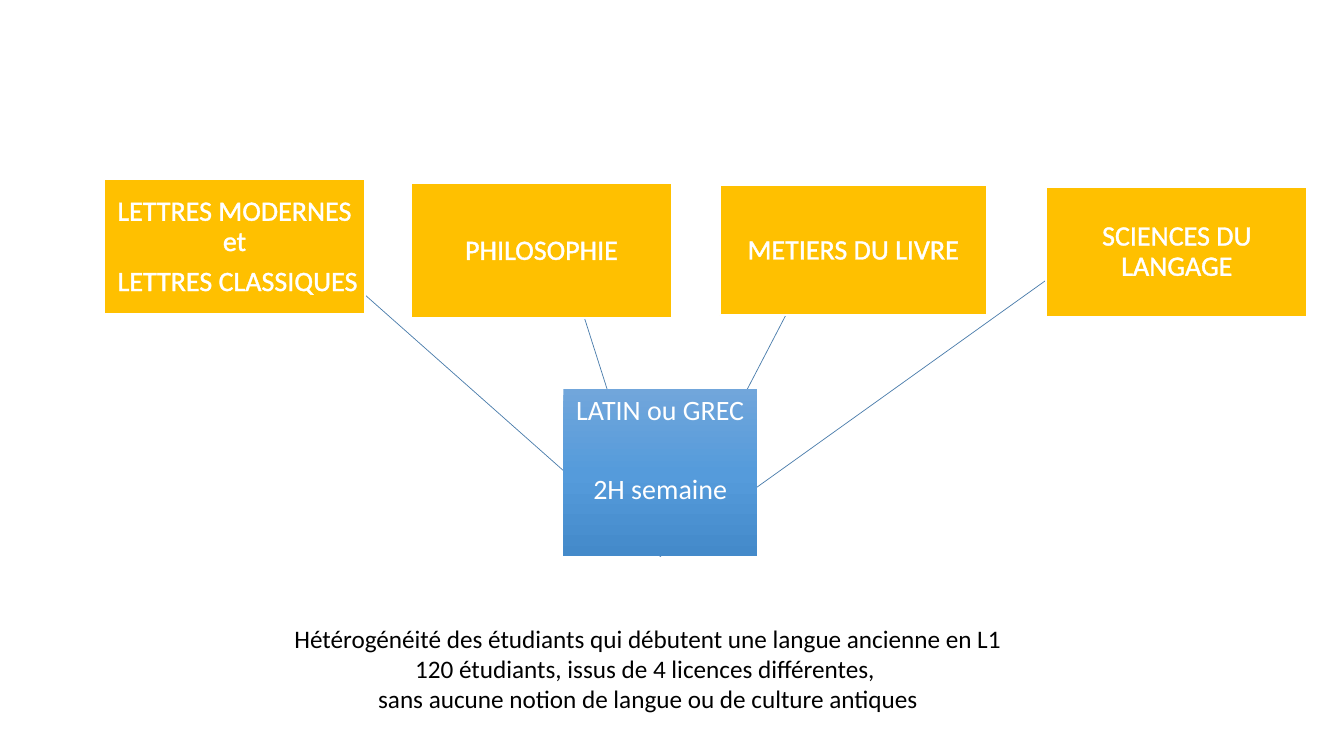
"""Slide showing four degrees that share one Latin or Greek course."""
from copy import deepcopy

from lxml import etree
from pptx import Presentation, util as u
from pptx.dml.color import RGBColor
from pptx.enum import shapes, text
from pptx.oxml import parse_xml
from pptx.oxml.ns import qn

DEGREES = [
    (["LETTRES MODERNES et", " LETTRES CLASSIQUES"], (2.62, 4.52, 6.58, 3.4)),
    (["PHILOSOPHIE"], (10.36, 4.62, 6.58, 3.4)),
    (["METIERS DU LIVRE"], (18.14, 4.67, 6.73, 3.28)),
    (["SCIENCES DU LANGAGE"], (26.37, 4.7, 6.58, 3.28)),
]
COURSE = ["LATIN ou GREC", "2H semaine"]
CAPTION = [
    "Hétérogénéité des étudiants qui débutent une langue ancienne en L1",
    "120 étudiants, issus de 4 licences différentes, ",
    "sans aucune notion de langue ou de culture antiques",
]
TEXT_OUTLINE = (
    '<a:ln xmlns:a="http://schemas.openxmlformats.org/drawingml/2006/main" w="12700">'
    '<a:solidFill><a:srgbClr val="FFFFFF"/></a:solidFill></a:ln>'
)


def colour(code):
    return RGBColor.from_string(code)


class Diagram:
    font = "Calibri"
    white, black = "FFFFFF", "000000"
    gold, link_blue = "FFC000", "497CAB"
    course_blues = [(0, "71A6DB"), (0.5, "559BDB"), (1, "448ACA")]

    def __init__(self, slide):
        self.shapes = slide.shapes

    def fill_text(self, frame, lines, size, ink, leading=1.0, gap=0):
        frame.word_wrap = True
        for index, line in enumerate(lines):
            paragraph = frame.add_paragraph() if index else frame.paragraphs[0]
            paragraph.text = line
            paragraph.alignment = text.PP_ALIGN.CENTER
            paragraph.line_spacing = leading
            paragraph.space_after = u.Pt(gap)
            paragraph.font.name = self.font
            paragraph.font.size = u.Pt(size)
            paragraph.font.color.rgb = colour(ink)

    def box(self, lines, place, gap, anchor, top_inset=0.03):
        box = self.shapes.add_shape(shapes.MSO_SHAPE.RECTANGLE, *map(u.Cm, place))
        box.shadow.inherit = False
        frame = box.text_frame
        frame.margin_left = frame.margin_right = frame.margin_bottom = u.Cm(0.03)
        frame.margin_top = u.Cm(top_inset)
        frame.vertical_anchor = anchor
        self.fill_text(frame, lines, 20, self.white, 0.9, gap)
        return box

    def degree(self, lines, place):
        degree = self.box(lines, place, 7, text.MSO_ANCHOR.MIDDLE)
        degree.fill.solid()
        degree.fill.fore_color.rgb = colour(self.gold)
        degree.line.color.rgb = colour(self.white)
        degree.line.width = u.Pt(1.5)
        for paragraph in degree.text_frame.paragraphs:
            for run in paragraph.runs:
                run._r.get_or_add_rPr().insert(0, parse_xml(TEXT_OUTLINE))
        return degree

    def course(self, lines, place):
        course = self.box(lines, place, 35, text.MSO_ANCHOR.TOP, 0.18)
        course.line.fill.background()
        course.fill.gradient()
        course.fill.gradient_angle = 270
        stop_list = course._element.spPr.find(".//" + qn("a:gsLst"))
        stop_list.append(deepcopy(stop_list[0]))
        for stop, (position, shade) in zip(course.fill.gradient_stops, self.course_blues):
            stop.position = position
            stop.color.rgb = colour(shade)
        return course

    def link(self):
        link = self.shapes.add_connector(shapes.MSO_CONNECTOR.STRAIGHT, 0, 0, 0, 0)
        link.line.color.rgb = colour(self.link_blue)
        link.line.width = u.Pt(0.5)
        etree.SubElement(link._element.spPr, qn("a:effectLst"))
        return link

    def caption(self, lines, place):
        caption = self.shapes.add_textbox(*map(u.Cm, place))
        self.fill_text(caption.text_frame, lines, 18, self.black)


def main():
    deck = Presentation()
    deck.slide_width, deck.slide_height = u.Cm(33.87), u.Cm(19.05)
    diagram = Diagram(deck.slides.add_slide(deck.slide_layouts[6]))

    links = [diagram.link() for _ in DEGREES]
    course = diagram.course(COURSE, (14.2, 9.8, 4.88, 4.22))
    for link, (lines, place) in zip(links, DEGREES):
        link.begin_connect(course, 2)
        link.end_connect(diagram.degree(lines, place), 0)
    diagram.caption(CAPTION, (6.02, 15.57, 20.62, 2.57))

    deck.save("out.pptx")


if __name__ == "__main__":
    main()
